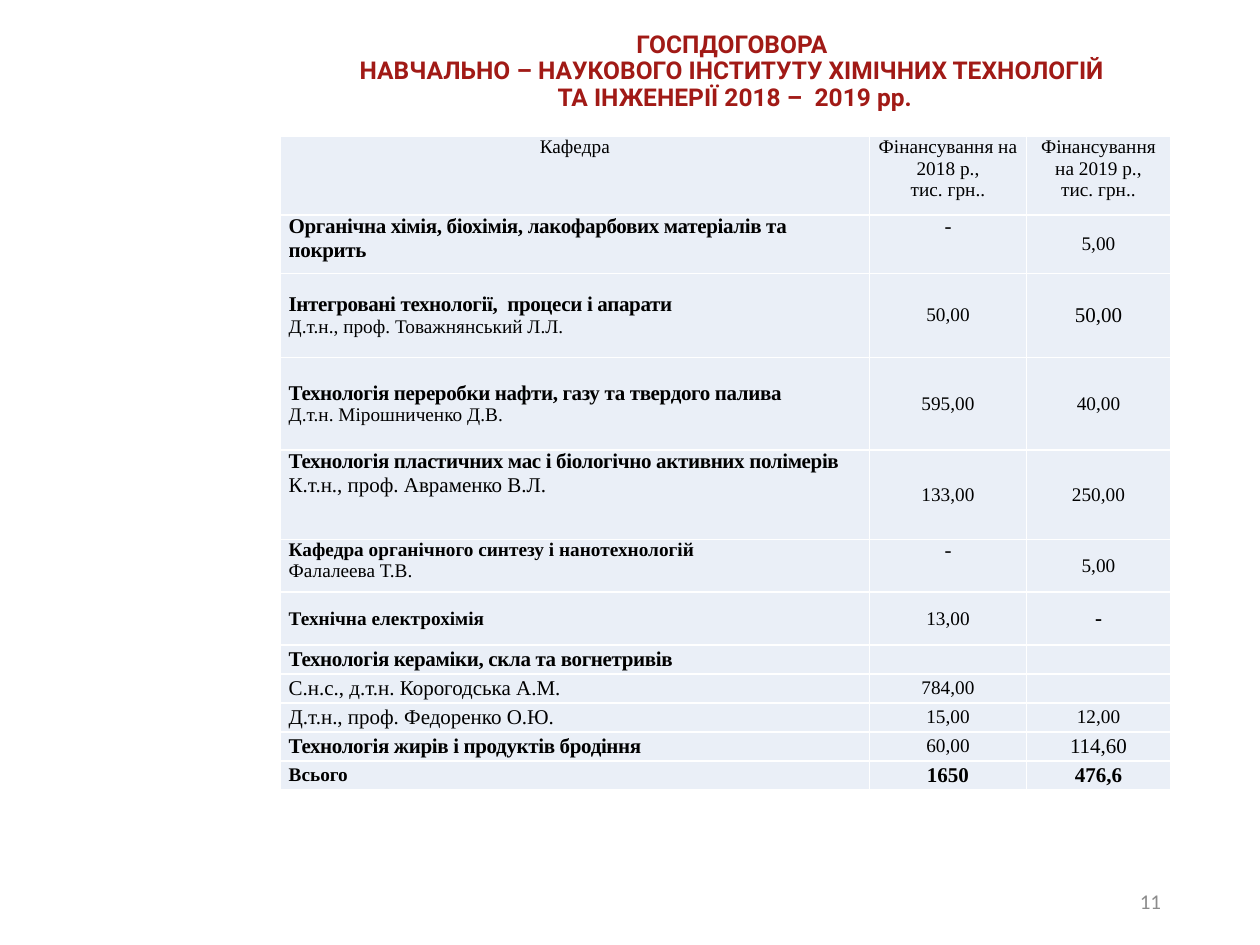
from lxml import etree
from pptx import Presentation
from pptx import util as u
from pptx.dml import color
from pptx.enum import text
from pptx.oxml import ns

COLORS = {"title": "A11A16", "ink": "000000", "cell": "EAEFF7",
          "border": "FFFFFF", "number": "8C8C8C"}
TABLE_FONT = "Times New Roman"
TOP, MIDDLE = text.MSO_ANCHOR.TOP, text.MSO_ANCHOR.MIDDLE
LEFT, CENTER, RIGHT = text.PP_ALIGN.LEFT, text.PP_ALIGN.CENTER, text.PP_ALIGN.RIGHT

# Text styles: size, bold, letter spacing in hundredths of a point
SMALL, LARGE = (11, False, 0), (12, False, 0)
SMALL_BOLD, LARGE_BOLD = (11, True, 0), (12, True, 0)
DEPARTMENT = (12, True, -20)

TITLE_LINES = ["ГОСПДОГОВОРА ",
               "НАВЧАЛЬНО – НАУКОВОГО ІНСТИТУТУ ХІМІЧНИХ ТЕХНОЛОГІЙ ",
               "ТА ІНЖЕНЕРІЇ 2018 –  2019 рр."]
COLUMN_WIDTHS = [337, 89.5, 82.5]


def entry(*lines, style=SMALL, anchor=MIDDLE):
    """One cell; a line is a string in the cell style or a (string, style) pair."""
    pairs = [(line, style) if isinstance(line, str) else line for line in lines]
    return pairs, style, anchor


def funding_header(year):
    return entry(f"Фінансування на {year} р.,", "тис. грн..", anchor=TOP)


# Row height, department, funding for 2018, funding for 2019
ROWS = [
    (45, entry("Кафедра", anchor=TOP), funding_header(2018), funding_header(2019)),
    (33.2, entry("Органічна хімія, біохімія, лакофарбових матеріалів та покрить",
                 style=DEPARTMENT, anchor=TOP),
     entry("-", style=LARGE, anchor=TOP), entry("5,00")),
    (48, entry(("Інтегровані технології,  процеси і апарати", DEPARTMENT),
               "Д.т.н., проф. Товажнянський Л.Л."),
     entry("50,00"), entry("50,00", style=LARGE)),
    (53, entry(("Технологія переробки нафти, газу та твердого палива", DEPARTMENT),
               "Д.т.н. Мірошниченко Д.В."),
     entry("595,00"), entry("40,00")),
    (51, entry(("Технологія пластичних мас і біологічно активних полімерів", DEPARTMENT),
               ("К.т.н., проф. Авраменко В.Л.", LARGE), anchor=TOP),
     entry("133,00"), entry("250,00")),
    (30.2, entry(("Кафедра органічного синтезу і нанотехнологій", SMALL_BOLD),
                 "Фалалеева Т.В.", anchor=TOP),
     entry("-", style=LARGE, anchor=TOP), entry("5,00")),
    (30.2, entry("Технічна електрохімія", style=SMALL_BOLD),
     entry("13,00"), entry("-", style=LARGE_BOLD)),
    (16.56, entry("Технологія кераміки, скла та вогнетривів", style=DEPARTMENT),
     entry(""), entry("")),
    (16.56, entry("С.н.с., д.т.н. Корогодська А.М.", style=LARGE),
     entry("784,00"), entry("")),
    (16.56, entry("Д.т.н., проф. Федоренко О.Ю.", style=LARGE),
     entry("15,00"), entry("12,00")),
    (16.56, entry("Технологія жирів і продуктів бродіння", style=DEPARTMENT),
     entry("60,00"), entry("114,60", style=LARGE)),
    (16.56, entry("Всього", style=SMALL_BOLD),
     entry("1650", style=LARGE_BOLD), entry("476,6", style=LARGE_BOLD)),
]


def rgb(name):
    return color.RGBColor.from_string(COLORS[name])


def add_run(paragraph, words, font, size, ink, bold=False, spacing=0):
    run = paragraph.add_run()
    run.text = words
    run.font.name = font
    run.font.size = u.Pt(size)
    run.font.bold = bold
    run.font.color.rgb = rgb(ink)
    if spacing:
        run.font._element.set("spc", str(spacing))


def add_title(slide):
    title = slide.shapes.title
    title.left, title.top = u.Pt(120), u.Pt(0)
    title.width, title.height = u.Pt(600), u.Pt(82)
    frame = title.text_frame
    frame.word_wrap = True
    frame.auto_size = text.MSO_AUTO_SIZE.NONE
    frame.vertical_anchor = MIDDLE
    heading = frame.paragraphs[0]
    heading.alignment = CENTER
    heading.line_spacing = 0.9
    for index, line in enumerate(TITLE_LINES):
        if index:
            heading.add_line_break()
        add_run(heading, line, "Roboto", 14, "title", bold=True)


def add_borders(cell):
    properties = cell._tc.get_or_add_tcPr()
    for side in ("a:lnL", "a:lnR", "a:lnT", "a:lnB"):
        line = etree.SubElement(properties, ns.qn(side), w=str(u.Pt(1)))
        fill = etree.SubElement(line, ns.qn("a:solidFill"))
        etree.SubElement(fill, ns.qn("a:srgbClr"), val=COLORS["border"])


def fill_cell(cell, content, alignment):
    lines, style, anchor = content
    add_borders(cell)
    cell.fill.solid()
    cell.fill.fore_color.rgb = rgb("cell")
    cell.margin_left = cell.margin_right = u.Pt(5)
    cell.margin_top = cell.margin_bottom = 0
    cell.vertical_anchor = anchor
    frame = cell.text_frame
    for index, (words, (size, bold, spacing)) in enumerate(lines):
        paragraph = frame.add_paragraph() if index else frame.paragraphs[0]
        paragraph.alignment = alignment
        if words:
            add_run(paragraph, words, TABLE_FONT, size, "ink", bold, spacing)
        else:  # keeps the row of an empty cell low
            etree.SubElement(paragraph._p, ns.qn("a:endParaRPr"), sz=str(size * 100))


def add_funding_table(slide):
    heights = [row[0] for row in ROWS]
    funding = slide.shapes.add_table(
        len(ROWS), len(COLUMN_WIDTHS), u.Pt(160), u.Pt(78),
        u.Pt(sum(COLUMN_WIDTHS)), u.Pt(sum(heights))).table
    funding.first_row = funding.horz_banding = False
    for column, width in zip(funding.columns, COLUMN_WIDTHS):
        column.width = u.Pt(width)
    for r, (height, *contents) in enumerate(ROWS):
        funding.rows[r].height = u.Pt(height)
        for c, content in enumerate(contents):
            alignment = LEFT if r and c == 0 else CENTER
            fill_cell(funding.cell(r, c), content, alignment)


def add_page_number(slide):
    box = slide.shapes.add_textbox(u.Pt(508.5), u.Pt(500.5), u.Pt(162), u.Pt(28.8))
    frame = box.text_frame
    frame.word_wrap = True
    frame.vertical_anchor = MIDDLE
    frame.paragraphs[0].alignment = RIGHT
    add_run(frame.paragraphs[0], "11", "Calibri", 12, "number")


def main():
    deck = Presentation()
    deck.slide_width, deck.slide_height = u.Pt(720), u.Pt(540)
    slide = deck.slides.add_slide(deck.slide_layouts[5])
    add_title(slide)
    add_funding_table(slide)
    add_page_number(slide)
    deck.save("out.pptx")


if __name__ == "__main__":
    main()
